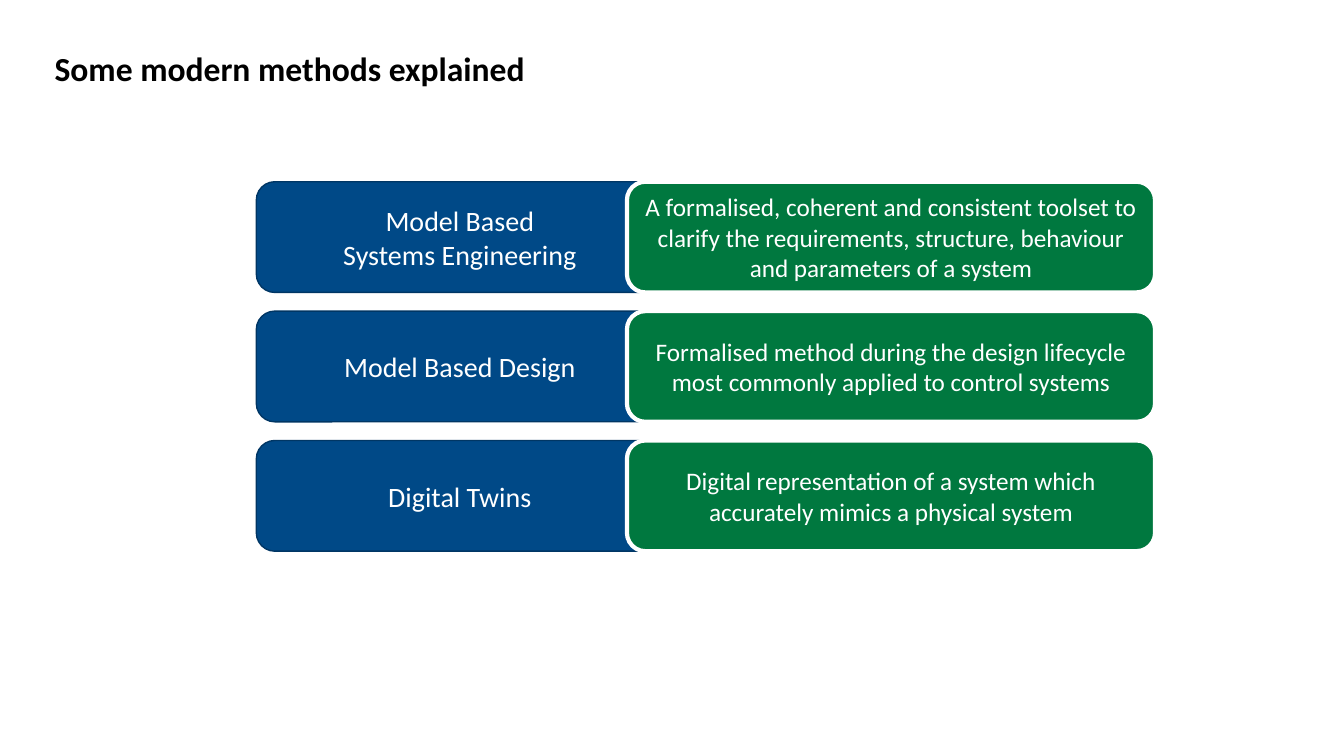
from pptx import Presentation
from pptx.dml.color import RGBColor
from pptx.enum.shapes import MSO_SHAPE as Shape
from pptx.enum.text import MSO_ANCHOR as Anchor, MSO_AUTO_SIZE as AutoSize, PP_ALIGN as Align
from pptx.util import Cm, Pt

COLOURS = {"black": "000000", "white": "FFFFFF", "blue": "004987",
           "navy": "003664", "green": "00783F"}

METHOD_STYLE = {"fill": "blue", "line": "navy", "line_width": 1, "size": 20}
EXPLANATION_STYLE = {"fill": "green", "line": "white", "line_width": 3, "size": 18}

METHODS = [
    ("Model Based\nSystems Engineering",
     "A formalised, coherent and consistent toolset to clarify the requirements, "
     "structure, behaviour and parameters of a system"),
    ("Model Based Design",
     "Formalised method during the design lifecycle most commonly applied to control systems"),
    ("Digital Twins",
     "Digital representation of a system which accurately mimics a physical system"),
]


class SlideBuilder:
    font_name = "Calibri"

    def __init__(self, slide):
        self.slide = slide

    def colour(self, name):
        return RGBColor.from_string(COLOURS[name])

    def set_text(self, shape, text, frame_format, paragraph_format, size, colour, bold=False):
        frame = shape.text_frame
        paragraph = frame.paragraphs[0]
        paragraph.text = text
        font_format = {"name": self.font_name, "size": Pt(size), "bold": bold}
        for target, values in ((frame, frame_format), (paragraph, paragraph_format),
                               (paragraph.font, font_format)):
            for key, value in values.items():
                setattr(target, key, value)
        paragraph.font.color.rgb = self.colour(colour)

    def place(self, shape, left, top, width, height):
        box = {"left": left, "top": top, "width": width, "height": height}
        for key, value in box.items():
            setattr(shape, key, Cm(value))

    def title(self, text, *box):
        shape = self.slide.shapes.title
        self.place(shape, *box)
        self.set_text(shape, text,
                      {"word_wrap": True, "auto_size": AutoSize.NONE,
                       "vertical_anchor": Anchor.TOP},
                      {"alignment": Align.LEFT, "line_spacing": 0.9}, 24, "black", True)

    def rounded_box(self, text, box, style):
        shape = self.slide.shapes.add_shape(Shape.ROUNDED_RECTANGLE, *map(Cm, box))
        shape.shadow.inherit = False
        shape.fill.solid()
        shape.fill.fore_color.rgb = self.colour(style["fill"])
        shape.line.color.rgb = self.colour(style["line"])
        shape.line.width = Pt(style["line_width"])
        self.set_text(shape, text, {"word_wrap": True, "vertical_anchor": Anchor.MIDDLE},
                      {"alignment": Align.CENTER}, style["size"], "white")


def main():
    presentation = Presentation()
    presentation.slide_width, presentation.slide_height = Cm(33.87), Cm(19.05)
    slide = presentation.slides.add_slide(presentation.slide_layouts[5])
    builder = SlideBuilder(slide)

    # Heading
    builder.title("Some modern methods explained", 1.12, 1.19, 15.27, 1.5)

    # One row per method: its name, overlapped by its explanation
    first_top, row_step, row_height = 4.58, 3.26, 2.79
    for row, (method, explanation) in enumerate(METHODS):
        top = first_top + row * row_step
        builder.rounded_box(method, (6.46, top, 10.26, row_height), METHOD_STYLE)
        builder.rounded_box(explanation, (15.8, top, 13.31, row_height), EXPLANATION_STYLE)

    presentation.save("out.pptx")


if __name__ == "__main__":
    main()
